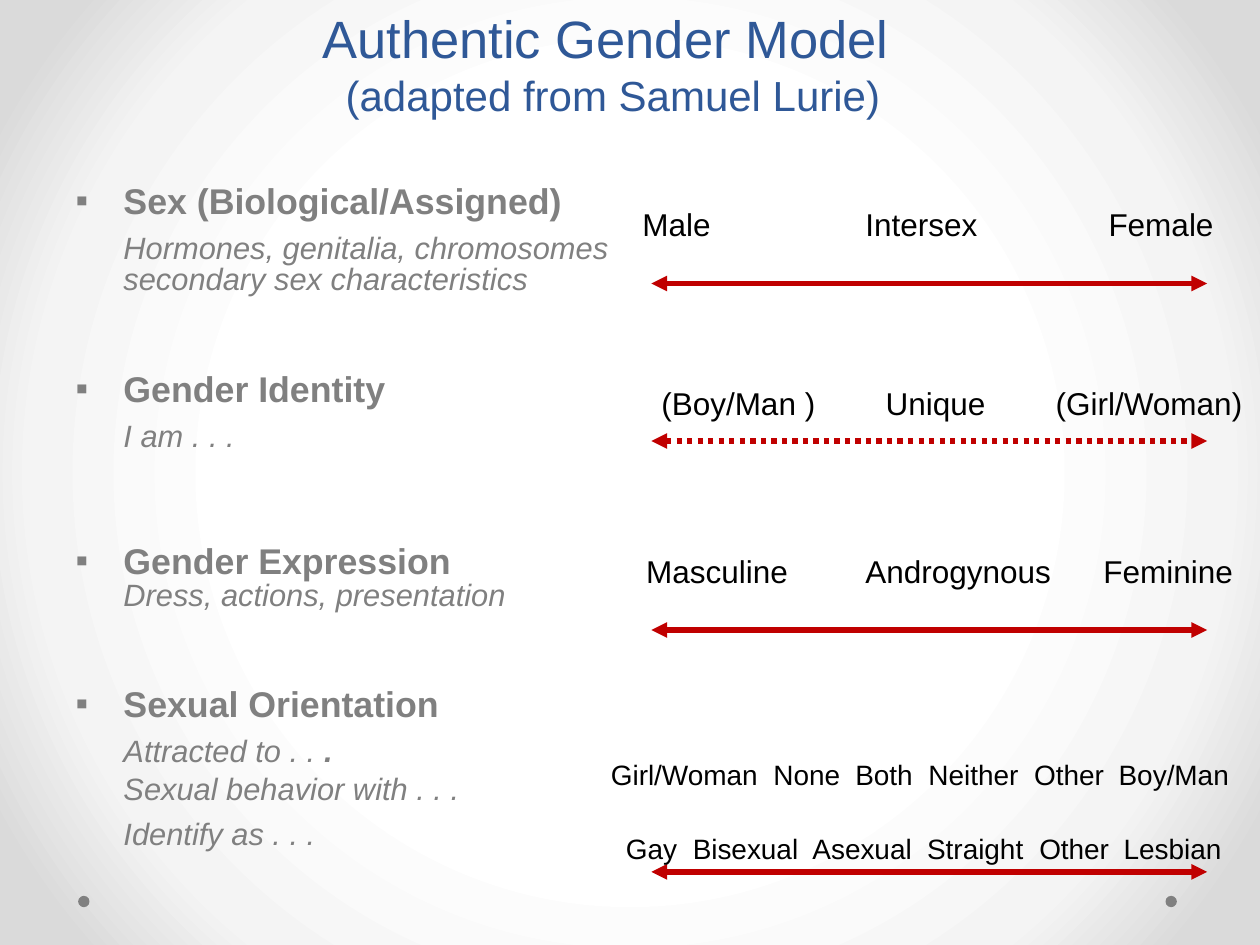
"""Build the Authentic Gender Model slide with four labelled spectrum arrows."""
from dataclasses import dataclass

from lxml import etree
from pptx import Presentation
from pptx.dml.color import RGBColor
from pptx.enum.dml import MSO_LINE
from pptx.enum.shapes import MSO_CONNECTOR, MSO_SHAPE
from pptx.enum.text import MSO_ANCHOR, MSO_AUTO_SIZE, PP_ALIGN
from pptx.oxml.ns import qn
from pptx.util import Inches, Pt

OVAL = MSO_SHAPE.OVAL
STRAIGHT = MSO_CONNECTOR.STRAIGHT
DOTTED = MSO_LINE.ROUND_DOT
TOP, BOTTOM = MSO_ANCHOR.TOP, MSO_ANCHOR.BOTTOM
CENTER = PP_ALIGN.CENTER
NO_FIT = MSO_AUTO_SIZE.NONE

BLUE = RGBColor(0x2F, 0x58, 0x97)
GRAY = RGBColor(0x80, 0x80, 0x80)
RED = RGBColor(0xC0, 0x00, 0x00)
BLACK = RGBColor(0x00, 0x00, 0x00)
BACKGROUND_STOPS = ((50, "FFFFFF"), (76, "F4F4F4"), (92, "DADADA"))

FONT = "Arial"
HEADING_SIZE, DETAIL_SIZE = 20.4, 17.6
HEADING_LINE, DETAIL_LINE = 20, 17.7
HANGING = 0.38
ARROW_LEFT, ARROW_RIGHT = 5.17, 9.58
DOT_SIZE = 0.09


@dataclass(frozen=True)
class Line:
    text: str
    gap: float
    heading: bool = False
    bold_end: str = ""


@dataclass(frozen=True)
class Scale:
    left: float
    top: float
    size: float
    words: tuple[str, ...]
    tabs: tuple[float, ...]


@dataclass(frozen=True)
class Arrow:
    height: float
    dotted: bool = False


LINES = (
    Line("Sex (Biological/Assigned)", 0, heading=True),
    Line("Hormones, genitalia, chromosomes", 7.4),
    Line("secondary sex characteristics", 0),
    Line("Gender Identity", 44.6, heading=True),
    Line("I am . . .", 7.4),
    Line("Gender Expression", 53.2, heading=True),
    Line("Dress, actions, presentation", 0),
    Line("Sexual Orientation", 44, heading=True),
    Line("Attracted to . . ", 7.4, bold_end="."),
    Line("Sexual behavior with . . .", 4),
    Line("Identify as . . .", 8),
)
SCALES = (
    Scale(5, 1.58, 18, ("Male", "Intersex", "Female"), (1.77, 3.7)),
    Scale(5.15, 3, 18, ("(Boy/Man )", "Unique", "(Girl/Woman)"), (1.78, 3.13)),
    Scale(5.03, 4.33, 18, ("Masculine", "Androgynous", "Feminine"), (1.74, 3.63)),
    Scale(4.75, 5.96, 16, ("Girl/Woman", "None", "Both", "Neither", "Other", "Boy/Man"),
          (1.29, 1.94, 2.52, 3.36, 4.03)),
    Scale(4.87, 6.55, 16, ("Gay", "Bisexual", "Asexual", "Straight", "Other", "Lesbian"),
          (0.53, 1.48, 2.39, 3.28, 3.95)),
)
ARROWS = (Arrow(2.25), Arrow(3.5, dotted=True), Arrow(5), Arrow(6.92))


def write(para, text: str, *, size: float, color: RGBColor,
          bold: bool = False, italic: bool = False) -> None:
    span = para.add_run()
    span.text = text
    span.font.name = FONT
    span.font.size = Pt(size)
    span.font.color.rgb = color
    span.font.bold = bold
    span.font.italic = italic


def place(box, left: float, top: float, width: float, height: float) -> None:
    box.left, box.top = Inches(left), Inches(top)
    box.width, box.height = Inches(width), Inches(height)


def next_paragraph(frame, index: int):
    return frame.add_paragraph() if index else frame.paragraphs[0]


def paint_background(page) -> None:
    page.background.fill.gradient()
    gradient = next(page.background._cSld.iter(qn("a:gradFill")))
    for child in list(gradient):
        gradient.remove(child)
    stops = etree.SubElement(gradient, qn("a:gsLst"))
    for position, color in BACKGROUND_STOPS:
        stop = etree.SubElement(stops, qn("a:gs"), pos=str(position * 1000))
        etree.SubElement(stop, qn("a:srgbClr"), val=color)
    circle = etree.SubElement(gradient, qn("a:path"), attrib={"path": "circle"})
    etree.SubElement(circle, qn("a:fillToRect"), dict.fromkeys("ltrb", "50000"))


def add_dot(page, left: float, top: float) -> None:
    dot = page.shapes.add_shape(OVAL, Inches(left), Inches(top),
                                Inches(DOT_SIZE), Inches(DOT_SIZE))
    dot.shadow.inherit = False
    dot.fill.solid()
    dot.fill.fore_color.rgb = GRAY
    dot.line.fill.background()


def fill_title(box) -> None:
    place(box, 0, 0.05, 9.73, 0.95)
    frame = box.text_frame
    frame.auto_size, frame.vertical_anchor = NO_FIT, BOTTOM
    rows = (("Authentic Gender Model ", 30), ("(adapted from Samuel Lurie)", 24))
    for index, (text, size) in enumerate(rows):
        para = next_paragraph(frame, index)
        para.alignment = CENTER
        para.space_before = Pt(0)
        write(para, text, size=size, color=BLUE)


def fill_body(box) -> None:
    place(box, 0.5, 1.43, 9.17, 5.58)
    frame = box.text_frame
    frame.auto_size, frame.vertical_anchor = NO_FIT, TOP
    for index, line in enumerate(LINES):
        para = next_paragraph(frame, index)
        para.line_spacing = Pt(HEADING_LINE if line.heading else DETAIL_LINE)
        para.space_before = Pt(line.gap)
        properties = para._p.get_or_add_pPr()
        properties.set("marL", str(Inches(HANGING)))
        properties.set("indent", str(-Inches(HANGING) if line.heading else 0))
        if line.heading:
            etree.SubElement(properties, qn("a:buFont"), typeface=FONT)
            etree.SubElement(properties, qn("a:buChar"), char="▪")
        else:
            etree.SubElement(properties, qn("a:buNone"))
        write(para, line.text, size=HEADING_SIZE if line.heading else DETAIL_SIZE,
              color=GRAY, bold=line.heading, italic=not line.heading)
        if line.bold_end:
            write(para, line.bold_end, size=DETAIL_SIZE, color=GRAY, bold=True, italic=True)


def add_scale(page, scale: Scale) -> None:
    box = page.shapes.add_textbox(Inches(scale.left), Inches(scale.top),
                                  Inches(10 - scale.left), Inches(0.4))
    box.text_frame.word_wrap = True
    para = box.text_frame.paragraphs[0]
    tabs = etree.SubElement(para._p.get_or_add_pPr(), qn("a:tabLst"))
    for position in scale.tabs:
        etree.SubElement(tabs, qn("a:tab"), pos=str(Inches(position)), algn="l")
    write(para, "\t".join(scale.words), size=scale.size, color=BLACK)


def add_arrow(page, arrow: Arrow) -> None:
    connector = page.shapes.add_connector(
        STRAIGHT, Inches(ARROW_LEFT), Inches(arrow.height),
        Inches(ARROW_RIGHT), Inches(arrow.height))
    connector.line.color.rgb = RED
    connector.line.width = Pt(3)
    if arrow.dotted:
        connector.line.dash_style = DOTTED
    outline = connector.line._get_or_add_ln()
    for end in ("a:headEnd", "a:tailEnd"):
        etree.SubElement(outline, qn(end), type="triangle")
    etree.SubElement(connector._element.spPr, qn("a:effectLst"))


def main() -> None:
    deck = Presentation()
    deck.slide_width, deck.slide_height = Inches(10), Inches(7.5)
    page = deck.slides.add_slide(deck.slide_layouts[1])
    paint_background(page)
    for left in (9.25, 0.62):
        add_dot(page, left, 7.11)
    fill_title(page.shapes.title)
    fill_body(page.placeholders[1])
    for arrow in ARROWS:
        add_arrow(page, arrow)
    for scale in SCALES:
        add_scale(page, scale)
    deck.save("out.pptx")


if __name__ == "__main__":
    main()
